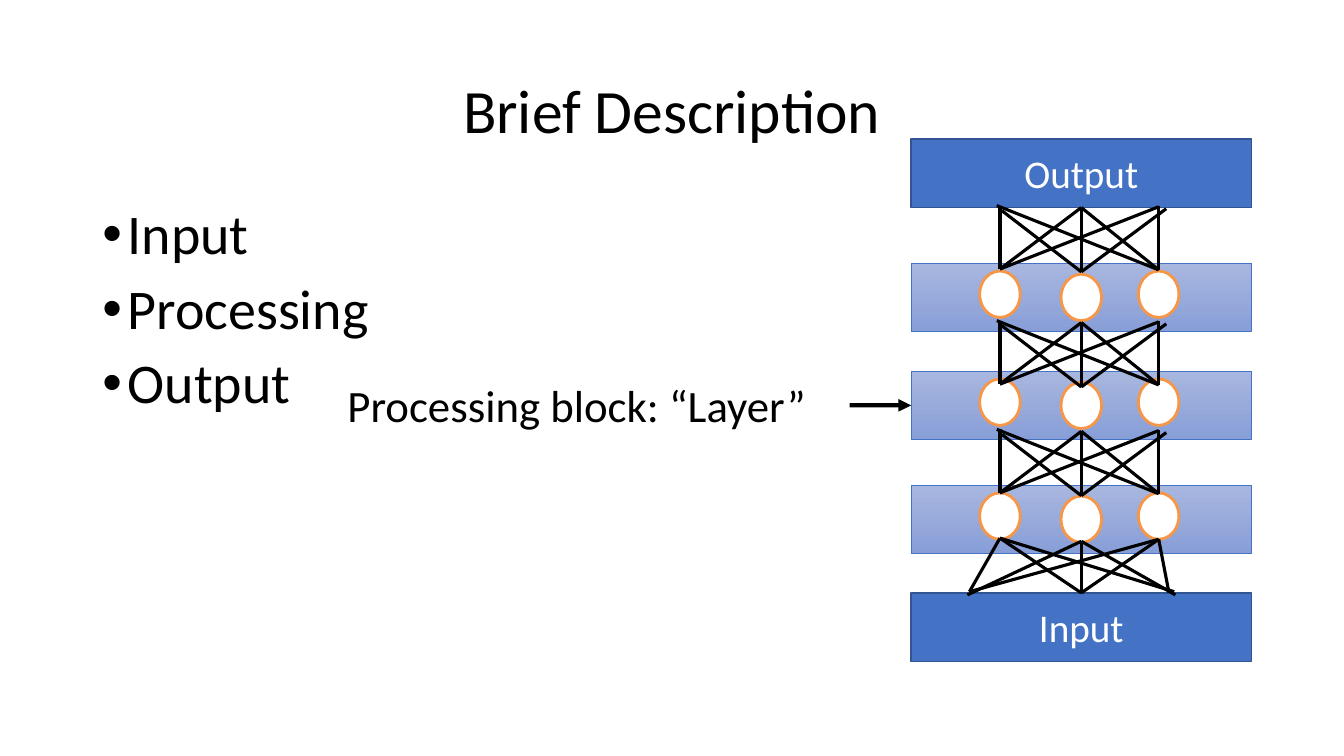
from dataclasses import dataclass

from lxml.etree import SubElement
from pptx import Presentation
from pptx.dml.color import RGBColor as RGB
from pptx.enum.shapes import MSO_CONNECTOR as LINK, MSO_SHAPE as SHAPE
from pptx.enum.text import MSO_ANCHOR as ANCHOR, PP_ALIGN as ALIGN
from pptx.oxml.ns import qn
from pptx.shapes.autoshape import Shape
from pptx.shapes.connector import Connector
from pptx.util import Cm, Pt

BLACK = RGB(0x00, 0x00, 0x00)
WHITE = RGB(0xFF, 0xFF, 0xFF)
BLUE = RGB(0x44, 0x72, 0xC4)
NAVY = RGB(0x32, 0x54, 0x91)
PALE = RGB(0xA8, 0xB7, 0xDF)
LILAC = RGB(0x88, 0x9E, 0xD7)
ORANGE = RGB(0xF7, 0x96, 0x46)
FONT = "Calibri"

LEFT, WIDE, HIGH = 22.96, 8.58, 1.73
MID = LEFT + WIDE / 2
COLS = (25.2, MID, 29.2)
NODE_W, NODE_H = 1.02, 1.17
NODE_DROPS = (0.2, 0.28, 0.2)
LAYER_TOPS = (6.63, 9.35, 12.22)
GAP_BASES = (6.78, 9.68, 12.42)


@dataclass
class Box:
    left: float
    top: float
    width: float
    height: float


@dataclass
class Wire:
    x1: float
    y1: float
    x2: float
    y2: float


# Wires above each layer; heights are measured from the gap's base
GAP_WIRES = (
    Wire(COLS[0], 0, COLS[0], -1.6),
    Wire(COLS[0], 0, MID, -1.55),
    Wire(COLS[0], 0, COLS[2], -1.57),
    Wire(MID, 0.07, 25.25, -1.47),
    Wire(MID, 0.07, MID, -1.55),
    Wire(MID, 0.07, 29.39, -1.52),
    Wire(COLS[2], 0.02, 25.12, -1.6),
    Wire(COLS[2], 0.02, COLS[2], -1.58),
    Wire(COLS[2], 0.02, MID, -1.55),
)
INPUT_TOP = 14.94
INPUT_WIRES = (
    Wire(24.43, 14.91, COLS[0], 13.56),
    Wire(MID, INPUT_TOP, COLS[0], 13.56),
    Wire(29.59, 14.91, COLS[0], 13.56),
    Wire(24.38, 14.99, MID, 13.64),
    Wire(MID, INPUT_TOP, MID, 13.64),
    Wire(29.62, 14.99, MID, 13.64),
    Wire(24.43, 14.91, COLS[2], 13.59),
    Wire(MID, INPUT_TOP, COLS[2], 13.59),
    Wire(29.46, INPUT_TOP, COLS[2], 13.59),
)

deck = Presentation()
deck.slide_width, deck.slide_height = Cm(33.87), Cm(19.05)
slide = deck.slides.add_slide(deck.slide_layouts[6])
shapes = slide.shapes


def add_shape(kind: SHAPE, box: Box, edge: RGB, weight: float) -> Shape:
    shape = shapes.add_shape(kind, Cm(box.left), Cm(box.top), Cm(box.width), Cm(box.height))
    shape.shadow.inherit = False
    shape.line.color.rgb = edge
    shape.line.width = Pt(weight)
    return shape


def set_text(shape: Shape, text: str, size: int, color: RGB, align: ALIGN, anchor: ANCHOR) -> None:
    frame = shape.text_frame
    frame.word_wrap = True
    frame.vertical_anchor = anchor
    frame.text = text
    for para in frame.paragraphs:
        para.alignment = align
        for run in para.runs:
            run.font.name = FONT
            run.font.size = Pt(size)
            run.font.color.rgb = color


def add_text(box: Box, text: str, size: int, align: ALIGN, anchor: ANCHOR) -> Shape:
    shape = shapes.add_textbox(Cm(box.left), Cm(box.top), Cm(box.width), Cm(box.height))
    set_text(shape, text, size, BLACK, align, anchor)
    return shape


def add_bar(text: str, top: float) -> Shape:
    bar = add_shape(SHAPE.RECTANGLE, Box(LEFT, top, WIDE, HIGH), NAVY, 1)
    bar.fill.solid()
    bar.fill.fore_color.rgb = BLUE
    set_text(bar, text, 28, WHITE, ALIGN.CENTER, ANCHOR.MIDDLE)
    return bar


def add_layer(top: float) -> Shape:
    """Draw a shaded block holding its three nodes."""
    layer = add_shape(SHAPE.RECTANGLE, Box(LEFT, top, WIDE, HIGH), BLUE, 0.5)
    layer.fill.gradient()
    layer.fill.gradient_angle = 270
    for stop, color in zip(layer.fill.gradient_stops, (PALE, LILAC)):
        stop.color.rgb = color
    for x, drop in zip(COLS, NODE_DROPS):
        box = Box(x - NODE_W / 2, top + drop, NODE_W, NODE_H)
        node = add_shape(SHAPE.OVAL, box, ORANGE, 2)
        node.fill.solid()
        node.fill.fore_color.rgb = WHITE
    return layer


def add_wire(wire: Wire, base: float = 0, weight: float = 2.25) -> Connector:
    line = shapes.add_connector(LINK.STRAIGHT, Cm(wire.x1), Cm(base + wire.y1),
                                Cm(wire.x2), Cm(base + wire.y2))
    line.line.color.rgb = BLACK
    line.line.width = Pt(weight)
    SubElement(line._element.spPr, qn("a:effectLst"))
    return line


def add_bullets(frame) -> None:
    for index, para in enumerate(frame.paragraphs):
        para.line_spacing = 0.9
        if index:
            para.space_before = Pt(10)
        props = para._p.get_or_add_pPr()
        props.set("marL", str(Cm(0.64)))
        props.set("indent", str(Cm(-0.64)))
        SubElement(props, qn("a:buFont"), typeface="Arial")
        SubElement(props, qn("a:buChar"), char="•")


def main() -> None:
    title = add_text(Box(2.33, 1.01, 29.21, 3.68), "Brief Description", 44,
                     ALIGN.CENTER, ANCHOR.MIDDLE)
    title.text_frame.paragraphs[0].line_spacing = 0.9
    steps = add_text(Box(2.33, 5.08, 16.76, 12.09), "Input\nProcessing\nOutput", 40,
                     ALIGN.LEFT, ANCHOR.TOP)
    add_bullets(steps.text_frame)

    layers = [add_layer(top) for top in LAYER_TOPS]
    source = add_bar("Input", INPUT_TOP)
    result = add_bar("Output", 3.5)

    for base in GAP_BASES:
        for wire in GAP_WIRES:
            line = add_wire(wire, base)
            if base == GAP_BASES[0] and wire.x2 == MID:
                line.end_connect(result, 2)
    for wire in INPUT_WIRES:
        line = add_wire(wire)
        if wire.x1 == MID:
            line.begin_connect(source, 0)

    label = add_text(Box(7.67, 9.4, 13.74, 1.62), "Processing block: “Layer”", 32,
                     ALIGN.CENTER, ANCHOR.TOP)
    arrow = add_wire(Wire(21.41, 10.21, LEFT, 10.22), weight=3)
    arrow.begin_connect(label, 3)
    arrow.end_connect(layers[1], 1)
    SubElement(arrow.line._get_or_add_ln(), qn("a:tailEnd"), type="triangle")

    deck.save("out.pptx")


if __name__ == "__main__":
    main()
